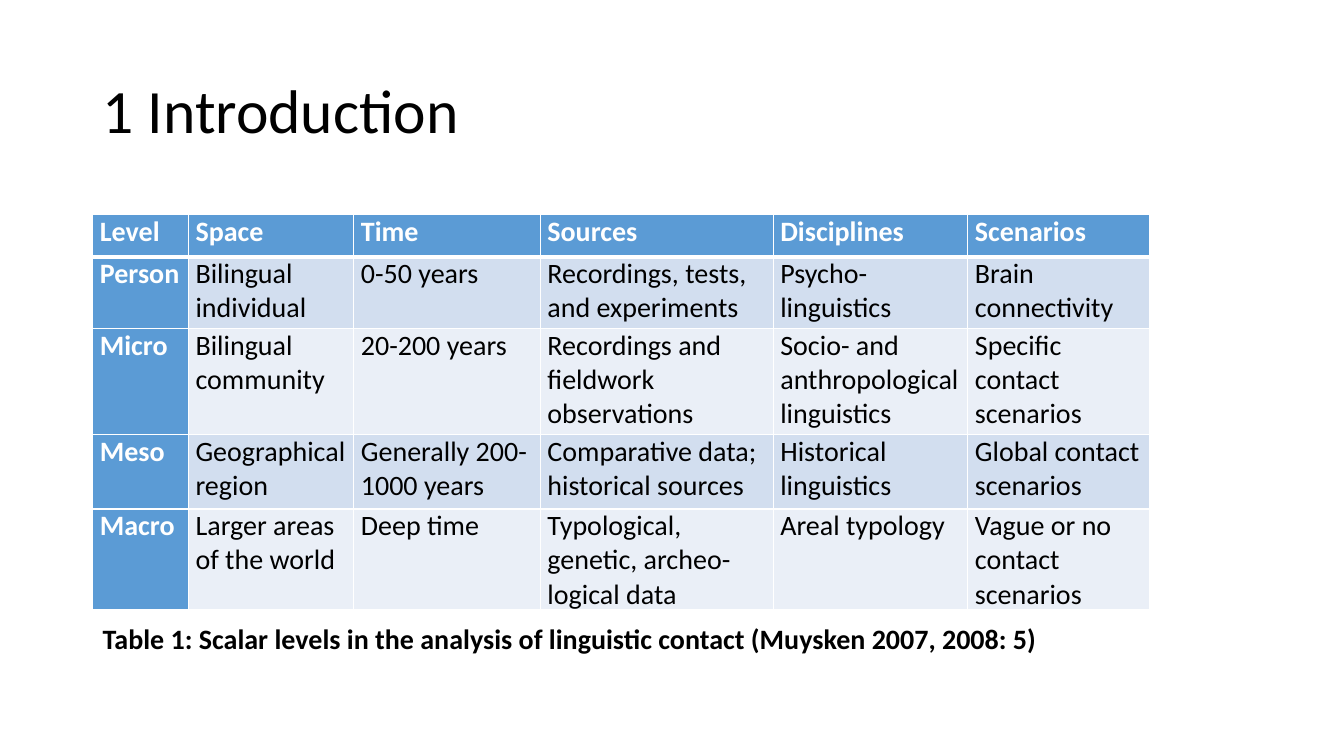
import pptx
import pptx.dml.color
import pptx.enum.text
import pptx.oxml
import pptx.oxml.ns
import pptx.util
from pptx.util import Inches

BLACK, WHITE, BLUE = "000000", "FFFFFF", "5B9BD5"
BANDS = ["D2DEEF", "EAEFF7"]

COLUMN_WIDTHS = [0.95, 1.64, 1.85, 2.31, 1.93, 1.8]
ROW_HEIGHTS = [0.42, 0.71, 1.05, 0.74, 0.99]
LEVELS = [
    ["Level", "Space", "Time", "Sources", "Disciplines", "Scenarios"],
    ["Person", "Bilingual individual", "0-50 years",
     "Recordings, tests, and experiments", "Psycho-linguistics", "Brain connectivity"],
    ["Micro", "Bilingual community", "20-200 years",
     "Recordings and fieldwork observations",
     "Socio- and anthropological linguistics", "Specific contact scenarios"],
    ["Meso", "Geographical region", "Generally 200-1000 years",
     "Comparative data; historical sources", "Historical linguistics",
     "Global contact scenarios"],
    ["Macro", "Larger areas of the world", "Deep time",
     "Typological, genetic, archeo-logical data", "Areal typology",
     "Vague or no contact scenarios"],
]


def color(value):
    return pptx.dml.color.RGBColor.from_string(value)


class SlideBuilder:
    font_name = "Calibri"

    def __init__(self, slide):
        self.slide = slide

    def format_text(self, text_frame, size, text_color, bold=False):
        for paragraph in text_frame.paragraphs:
            for run in paragraph.runs:
                run.font.name = self.font_name
                run.font.size = pptx.util.Pt(size)
                run.font.bold = bold
                run.font.color.rgb = color(text_color)

    def text(self, text, left, top, width, height, size, bold=False):
        shape = self.slide.shapes.add_textbox(
            Inches(left), Inches(top), Inches(width), Inches(height))
        text_frame = shape.text_frame
        text_frame.word_wrap = True
        text_frame.vertical_anchor = pptx.enum.text.MSO_ANCHOR.MIDDLE
        text_frame.text = text
        text_frame.paragraphs[0].line_spacing = 0.9
        self.format_text(text_frame, size, BLACK, bold)

    def border(self, cell, widths):
        properties = cell._tc.get_or_add_tcPr()
        for index, (side, width) in enumerate(widths.items()):
            line = pptx.oxml.parse_xml(
                f'<a:ln{side} {pptx.oxml.ns.nsdecls("a")} w="{pptx.util.Pt(width)}">'
                f'<a:solidFill><a:srgbClr val="{WHITE}"/></a:solidFill></a:ln{side}>')
            properties.insert(index, line)

    def cell(self, cell, text, fill, text_color, bold):
        cell.text = text
        cell.margin_left = cell.margin_right = Inches(0.07)
        cell.margin_top = cell.margin_bottom = 0
        cell.fill.solid()
        cell.fill.fore_color.rgb = color(fill)
        self.format_text(cell.text_frame, 20, text_color, bold)

    def table(self, rows, left, top, column_widths, row_heights):
        table = self.slide.shapes.add_table(
            len(rows), len(column_widths), Inches(left), Inches(top),
            Inches(sum(column_widths)), Inches(sum(row_heights))).table
        table.first_col = True
        for column, width in zip(table.columns, column_widths):
            column.width = Inches(width)
        for row, height in zip(table.rows, row_heights):
            row.height = Inches(height)
        for row_index, row in enumerate(rows):
            for column_index, text in enumerate(row):
                cell = table.cell(row_index, column_index)
                heading = row_index == 0 or column_index == 0
                fill = BLUE if heading else BANDS[(row_index - 1) % 2]
                self.cell(cell, text, fill, WHITE if heading else BLACK, heading)
                # A thicker rule separates the header from the body
                self.border(cell, {"L": 1, "R": 1,
                                   "T": 3 if row_index == 1 else 1,
                                   "B": 3 if row_index == 0 else 1})


def main():
    presentation = pptx.Presentation()
    presentation.slide_width = Inches(13.33)
    presentation.slide_height = Inches(7.5)
    builder = SlideBuilder(presentation.slides.add_slide(presentation.slide_layouts[6]))

    # Title
    builder.text("1 Introduction", 0.92, 0.4, 11.5, 1.45, 44)

    # Table of scalar levels and its caption
    builder.table(LEVELS, 0.92, 2.13, COLUMN_WIDTHS, ROW_HEIGHTS)
    builder.text("Table 1: Scalar levels in the analysis of linguistic contact "
                 "(Muysken 2007, 2008: 5)", 0.92, 6.14, 11.5, 0.42, 20, bold=True)

    presentation.save("out.pptx")


if __name__ == "__main__":
    main()
